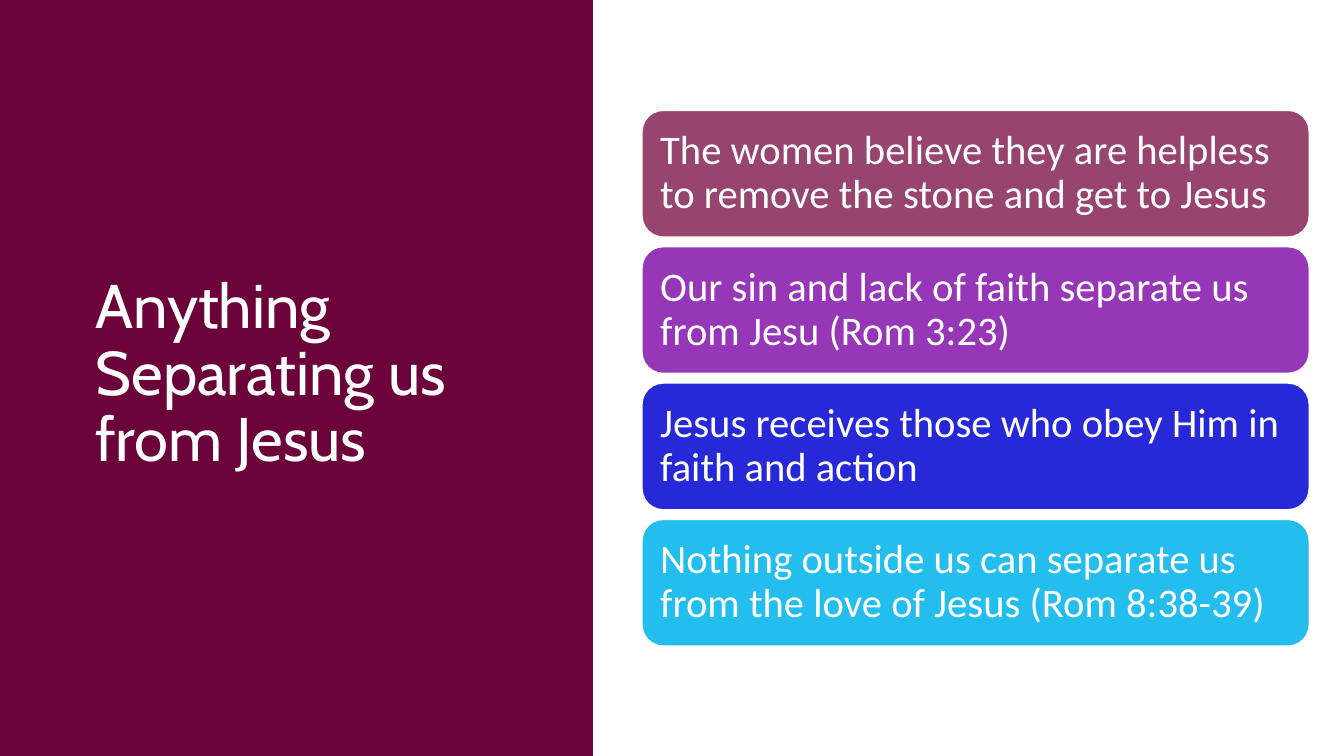
from pptx import Presentation
from pptx.dml.color import RGBColor
from pptx.enum.shapes import MSO_SHAPE
from pptx.enum.text import MSO_ANCHOR, PP_ALIGN
from pptx.util import Pt

RECT, ROUNDED = MSO_SHAPE.RECTANGLE, MSO_SHAPE.ROUNDED_RECTANGLE
MIDDLE, LEFT = MSO_ANCHOR.MIDDLE, PP_ALIGN.LEFT

COLORS = {
    "white": "FFFFFF",
    "panel": "6B033A",
    "plum": "97446E",
    "purple": "9637B7",
    "blue": "2729D8",
    "cyan": "24BEEE",
}

POINTS = [
    ("plum", "The women believe they are helpless to remove the stone and get to Jesus"),
    ("purple", "Our sin and lack of faith separate us from Jesu (Rom 3:23)"),
    ("blue", "Jesus receives those who obey Him in faith and action"),
    ("cyan", "Nothing outside us can separate us from the love of Jesus (Rom 8:38-39)"),
]

SLIDE_W, SLIDE_H = 960, 540
PANEL_W = 423.5
CARD_X, CARD_Y, CARD_W, CARD_H = 458.6, 78.8, 476.6, 90.5
CARD_PITCH = 97.4


def color(name):
    return RGBColor.from_string(COLORS[name])


def add_box(s, kind, x, y, w, h, fill, line=None):
    sp = s.shapes.add_shape(kind, Pt(x), Pt(y), Pt(w), Pt(h))
    sp.shadow.inherit = False
    sp.fill.solid()
    sp.fill.fore_color.rgb = color(fill)
    if line:
        sp.line.color.rgb = color(line)
        sp.line.width = Pt(1)
    else:
        sp.line.fill.background()
    return sp


def write(sp, text, font, size, inset_x, inset_y):
    tf = sp.text_frame
    tf.word_wrap = True
    tf.vertical_anchor = MIDDLE
    tf.margin_left = tf.margin_right = Pt(inset_x)
    tf.margin_top = tf.margin_bottom = Pt(inset_y)
    p = tf.paragraphs[0]
    p.alignment = LEFT
    p.line_spacing = 0.9
    r = p.add_run()
    r.text = text
    r.font.name = font
    r.font.size = Pt(size)
    r.font.color.rgb = color("white")


def add_title(s, text):
    sp = s.shapes.add_textbox(Pt(61.2), Pt(38.9), Pt(311), Pt(458))
    write(sp, text, "Cabin", 44, 7.2, 3.6)


def add_card(s, row, fill, text):
    y = CARD_Y + row * CARD_PITCH
    sp = add_box(s, ROUNDED, CARD_X, y, CARD_W, CARD_H, fill, "white")
    write(sp, text, "Calibri", 29, 8.6, 8.6)


def main():
    prs = Presentation()
    prs.slide_width, prs.slide_height = Pt(SLIDE_W), Pt(SLIDE_H)
    s = prs.slides.add_slide(prs.slide_layouts[6])
    s.background.fill.solid()
    s.background.fill.fore_color.rgb = color("white")

    # Title panel
    add_box(s, RECT, 0, 0, PANEL_W, SLIDE_H, "panel")
    add_title(s, "Anything Separating us from Jesus")

    # Stacked points
    for row, (fill, text) in enumerate(POINTS):
        add_card(s, row, fill, text)

    prs.save("out.pptx")


if __name__ == "__main__":
    main()
